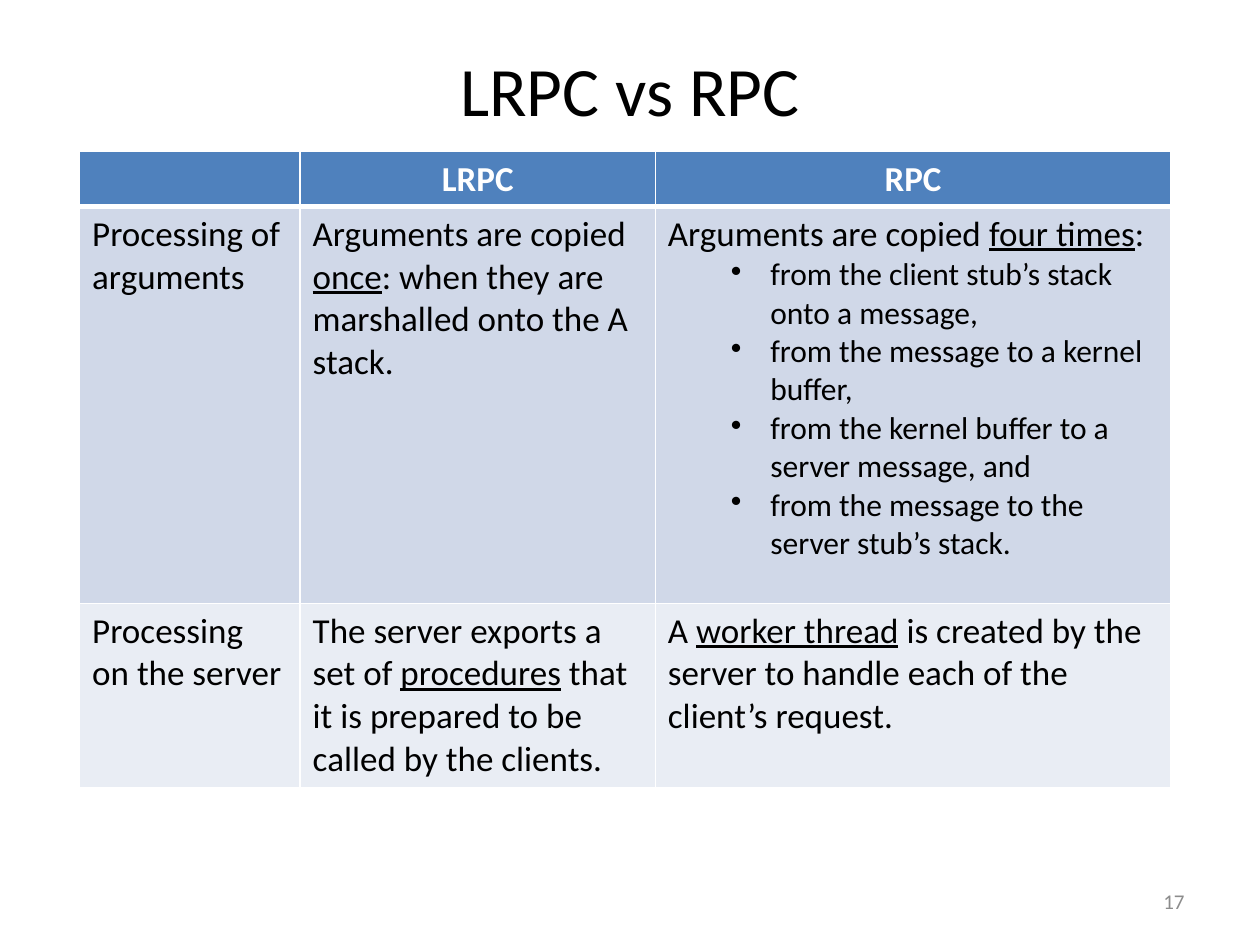
from lxml import etree
from pptx import Presentation
from pptx.dml.color import RGBColor
from pptx.enum.text import MSO_ANCHOR, PP_ALIGN
from pptx.oxml.ns import qn
from pptx.util import Pt

MIDDLE = MSO_ANCHOR.MIDDLE
LEFT, CENTER, RIGHT = PP_ALIGN.LEFT, PP_ALIGN.CENTER, PP_ALIGN.RIGHT
HUES = {"black": "000000", "white": "FFFFFF", "gray": "8C8C8C",
        "head": "4F81BD", "dark": "D0D8E8", "light": "E9EDF4"}


def write(para, text, size, hue, align=LEFT, bold=False):
    """Fill a paragraph; parts between underscores are underlined."""
    para.alignment = align
    font = para.font
    font.name, font.size, font.bold = "Calibri", Pt(size), bold
    font.color.rgb = RGBColor.from_string(HUES[hue])
    for i, part in enumerate(text.split("_")):
        run = para.add_run()
        run.text = part
        if i % 2:
            run.font.underline = True


def edge(cell, foot):
    """Draw white cell borders, the bottom one foot points wide."""
    props = cell._tc.get_or_add_tcPr()
    for i, (side, width) in enumerate(zip("LRTB", (1, 1, 1, foot))):
        line = etree.Element(qn(f"a:ln{side}"), w=str(Pt(width)))
        fill = etree.SubElement(line, qn("a:solidFill"))
        etree.SubElement(fill, qn("a:srgbClr"), val=HUES["white"])
        props.insert(i, line)


prs = Presentation()
prs.slide_width, prs.slide_height = Pt(720), Pt(540)
slide = prs.slides.add_slide(prs.slide_layouts[6])

# Title and page number
labels = [
    ("LRPC vs RPC", (36, 21.6, 648, 58.3), 39.6, "black", CENTER),
    ("17", (516, 500.5, 168, 28.75), 12, "gray", RIGHT),
]
for text, place, size, hue, align in labels:
    frame = slide.shapes.add_textbox(*map(Pt, place)).text_frame
    frame.word_wrap = True
    frame.vertical_anchor = MIDDLE
    write(frame.paragraphs[0], text, size, hue, align)

# Comparison table; the lines after the first in a cell are bullets
rows = [
    ("head", 31.4, ["", "LRPC", "RPC"]),
    ("dark", 226.8, [
        "Processing of arguments",
        "Arguments are copied _once_: when they are marshalled onto the A stack.",
        "Arguments are copied _four times_:\n"
        "from the client stub’s stack onto a message,\n"
        "from the message to a kernel buffer,\n"
        "from the kernel buffer to a server message, and\n"
        "from the message to the server stub’s stack."]),
    ("light", 105.2, [
        "Processing on the server",
        "The server exports a set of _procedures_ that it is prepared to be "
        "called by the clients.",
        "A _worker thread_ is created by the server to handle each of the "
        "client’s request."]),
]
widths = [126, 203, 294.5]
table = slide.shapes.add_table(
    len(rows), len(widths), Pt(45.5), Pt(86.6),
    Pt(sum(widths)), Pt(sum(row[1] for row in rows))).table
for col, width in zip(table.columns, widths):
    col.width = Pt(width)

for r, (shade, height, texts) in enumerate(rows):
    table.rows[r].height = Pt(height)
    head = r == 0
    for c, text in enumerate(texts):
        cell = table.cell(r, c)
        cell.fill.solid()
        cell.fill.fore_color.rgb = RGBColor.from_string(HUES[shade])
        edge(cell, 3 if head else 1)
        if not text:
            continue
        frame = cell.text_frame
        for i, line in enumerate(text.split("\n")):
            para = frame.add_paragraph() if i else frame.paragraphs[0]
            write(para, line, 18 if i else 20, "white" if head else "black",
                  CENTER if head else LEFT, head)
            if i:
                para.level = 1
                props = para._p.get_or_add_pPr()
                props.set("marL", str(Pt(58.5)))
                props.set("indent", str(Pt(-22.5)))
                mark = etree.Element(qn("a:buChar"), char="•")
                props.insert_element_before(mark, "a:defRPr")

prs.save("out.pptx")
